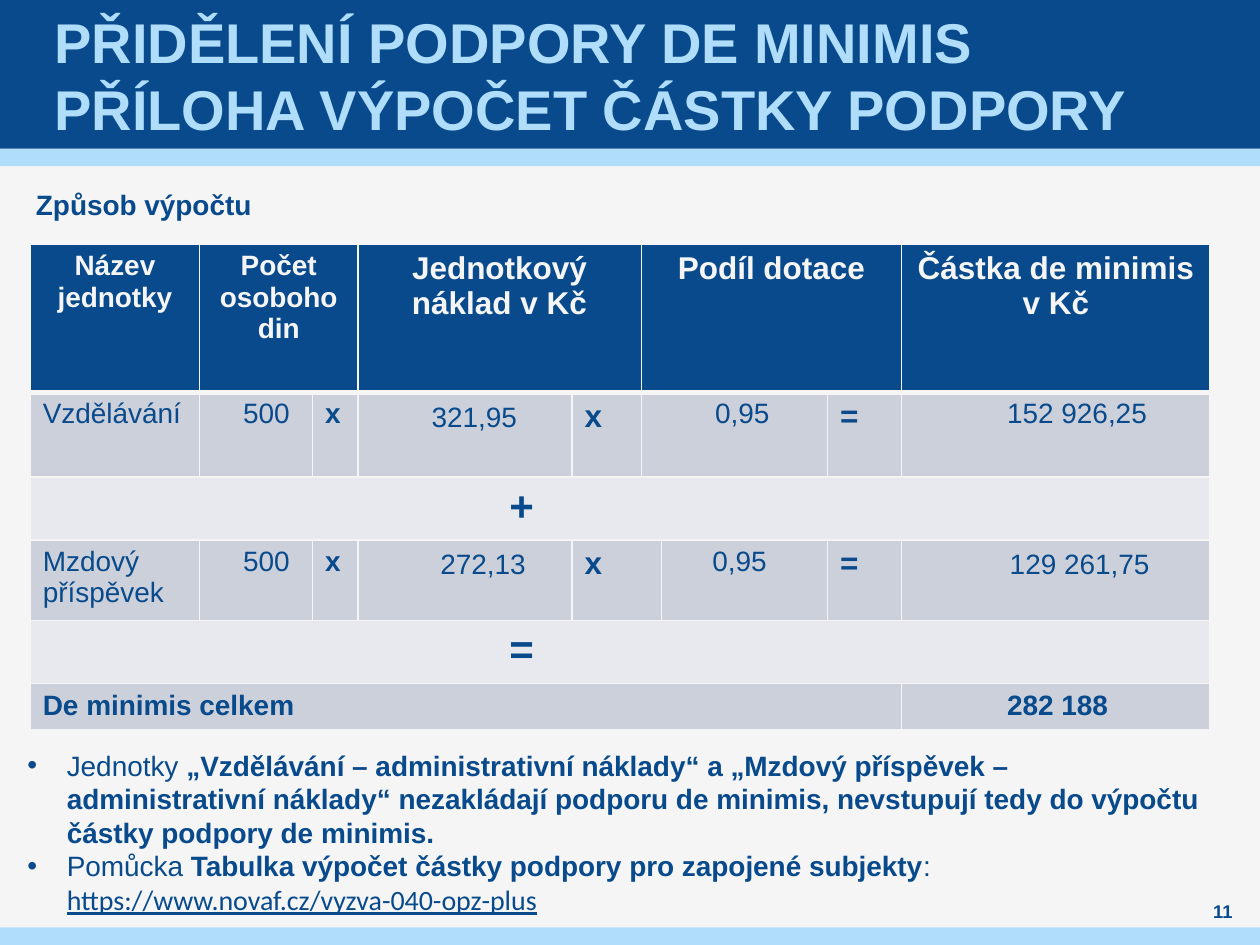
from itertools import product

from lxml.etree import SubElement
from pptx import Presentation
from pptx.dml.color import RGBColor
from pptx.enum.shapes import MSO_SHAPE
from pptx.enum.text import MSO_ANCHOR as Anchor, PP_ALIGN as Align
from pptx.oxml.ns import qn
from pptx.util import Pt

NAVY = RGBColor(0x08, 0x4A, 0x8B)
SKY = RGBColor(0xAF, 0xDD, 0xFA)
PAPER = RGBColor(0xF5, 0xF5, 0xF5)
ROW_DARK = RGBColor(0xCC, 0xD0, 0xDA)
ROW_LIGHT = RGBColor(0xE7, 0xE9, 0xEE)

COLUMN_WIDTHS = [96.8, 64.6, 25.8, 122.4, 39.6, 11.5, 95, 42.4, 176.2]
ROW_HEIGHTS = [84.6, 48.2, 36, 46.1, 36, 26.6]
ROW_FILLS = [NAVY, ROW_DARK, ROW_LIGHT, ROW_DARK, ROW_LIGHT, ROW_DARK]

# Each cell: text, columns spanned, size, bold, paragraph indent, top margin
TOP, LOWERED = 3.6, 5.4
TABLE_ROWS = [
    [("Název jednotky", 1, 16, True, 0, TOP),
     ("Počet osobohodin", 2, 16, True, 0, TOP),
     ("Jednotkový náklad v Kč", 2, 18, True, 0, TOP),
     ("Podíl dotace", 3, 18, True, 0, TOP),
     ("Částka de minimis v Kč", 1, 18, True, 0, TOP)],
    [("Vzdělávání", 1, 16, False, 0, TOP),
     ("500", 1, 16, False, 17.7, TOP),
     ("x", 1, 16, True, 0, TOP),
     ("321,95", 1, 16, False, 35, LOWERED),
     ("x", 1, 18, True, 0, TOP),
     ("0,95", 2, 16, False, 35, TOP),
     ("=", 1, 18, True, 0, TOP),
     ("152 926,25", 1, 16, False, 53, TOP)],
    [("+", 9, 24, True, 266.5, TOP)],
    [("Mzdový příspěvek", 1, 16, False, 0, TOP),
     ("500", 1, 16, False, 17.7, TOP),
     ("x", 1, 16, True, 0, TOP),
     ("272,13", 1, 16, False, 40, LOWERED),
     ("x", 2, 18, True, 0, TOP),
     ("0,95", 1, 16, False, 22, TOP),
     ("=", 1, 18, True, 0, TOP),
     ("129 261,75", 1, 16, False, 54.5, LOWERED)],
    [("=", 9, 24, True, 266.5, TOP)],
    [("De minimis celkem", 8, 16, True, 0, TOP),
     ("282 188", 1, 16, True, 53, TOP)],
]

NOTES = [
    [("Jednotky ", {}),
     ("„Vzdělávání – administrativní náklady“ a „Mzdový příspěvek – "
      "administrativní náklady“ nezakládají podporu de minimis, nevstupují "
      "tedy do výpočtu částky podpory de minimis.", {"bold": True})],
    [("Pomůcka ", {}),
     ("Tabulka výpočet částky podpory pro zapojené subjekty", {"bold": True}),
     (":", {}),
     ("\v", {}),
     ("https://www.novaf.cz/vyzva-040-opz-plus",
      {"name": "Calibri", "underline": True})],
]


def set_attributes(target, values):
    for name, value in values.items():
        setattr(target, name, value)


def format_font(font, size, color=NAVY, **values):
    font.color.rgb = color
    set_attributes(font, {"name": "Arial", "size": Pt(size), "bold": False, **values})


def set_margins(target, left, top, right, bottom):
    set_attributes(target, {"margin_left": Pt(left), "margin_top": Pt(top),
                            "margin_right": Pt(right), "margin_bottom": Pt(bottom)})


def set_indent(paragraph, left, first_line=0):
    properties = paragraph._p.get_or_add_pPr()
    properties.set("marL", str(Pt(left)))
    properties.set("indent", str(Pt(first_line)))
    return properties


def place(shape, box):
    set_attributes(shape, dict(zip(("left", "top", "width", "height"), map(Pt, box))))


def add_text_frame(slide, box, margins=(7.2, 3.6, 7.2, 3.6)):
    frame = slide.shapes.add_textbox(*map(Pt, box)).text_frame
    frame.word_wrap = True
    set_margins(frame, *margins)
    return frame


def add_band(slide, box, color):
    band = slide.shapes.add_shape(MSO_SHAPE.RECTANGLE, *map(Pt, box))
    band.shadow.inherit = False
    band.fill.solid()
    band.fill.fore_color.rgb = color
    band.line.fill.background()


def add_header(slide, box):
    left, top, width, height = box
    add_band(slide, (left, top + height, width, 10), SKY)
    add_band(slide, box, NAVY)
    title = slide.shapes.title
    slide.shapes._spTree.append(title._element)  # bring above the bands
    place(title, (left + 28, top, 663, height))
    frame = title.text_frame
    set_attributes(frame, {"word_wrap": True, "vertical_anchor": Anchor.MIDDLE})
    set_margins(frame, 3, 0, 3, 0)
    frame.text = "PŘIDĚLENÍ PODPORY DE MINIMIS\vPŘÍLOHA VÝPOČET ČÁSTKY PODPORY"
    paragraph = frame.paragraphs[0]
    paragraph.alignment = Align.LEFT
    for run in paragraph.runs:
        format_font(run.font, 32, SKY, bold=True)


def add_subheading(slide, box):
    frame = add_text_frame(slide, box, (12, 5.4, 7.2, 3.6))
    run = frame.paragraphs[0].add_run()
    run.text = "Způsob výpočtu"
    format_font(run.font, 16, bold=True)


def style_cell(cell, fill, thick_edge):
    # Borders come before the fill in the cell properties
    properties = cell._tc.get_or_add_tcPr()
    for edge in ("lnL", "lnR", "lnT", "lnB"):
        width = Pt(3 if edge == thick_edge else 1)
        line = SubElement(properties, qn(f"a:{edge}"), w=str(width))
        solid = SubElement(line, qn("a:solidFill"))
        SubElement(solid, qn("a:srgbClr"), val=str(PAPER))
    cell.fill.solid()
    cell.fill.fore_color.rgb = fill


def add_calculation_table(slide, left, top):
    rows, columns = len(ROW_HEIGHTS), len(COLUMN_WIDTHS)
    table = slide.shapes.add_table(
        rows, columns, Pt(left), Pt(top),
        Pt(sum(COLUMN_WIDTHS)), Pt(sum(ROW_HEIGHTS))).table
    for column, width in zip(table.columns, COLUMN_WIDTHS):
        column.width = Pt(width)
    for row, height in zip(table.rows, ROW_HEIGHTS):
        row.height = Pt(height)
    for row, column in product(range(rows), range(columns)):
        style_cell(table.cell(row, column), ROW_FILLS[row],
                   {0: "lnB", 1: "lnT"}.get(row))

    for row, entries in enumerate(TABLE_ROWS):
        column = 0
        for text, span, size, bold, indent, margin_top in entries:
            cell = table.cell(row, column)
            if span > 1:
                cell.merge(table.cell(row, column + span - 1))
            # Indents, unlike wide cell margins, never stretch a column
            set_margins(cell, 7.2, margin_top, 7.2, 3.6)
            paragraph = cell.text_frame.paragraphs[0]
            paragraph.alignment = Align.LEFT if row else Align.CENTER
            set_indent(paragraph, indent)
            run = paragraph.add_run()
            run.text = text
            format_font(run.font, size, NAVY if row else PAPER, bold=bold)
            column += span


def add_notes_list(slide, box):
    frame = add_text_frame(slide, box)
    for index, parts in enumerate(NOTES):
        paragraph = frame.add_paragraph() if index else frame.paragraphs[0]
        properties = set_indent(paragraph, 22.5, -22.5)
        SubElement(properties, qn("a:buFont"), typeface="Arial")
        SubElement(properties, qn("a:buChar"), char="•")
        for text, values in parts:
            if text == "\v":
                paragraph.add_line_break()
                continue
            run = paragraph.add_run()
            run.text = text
            format_font(run.font, 16, **values)


def add_footer(slide, band_box, number_box):
    add_band(slide, band_box, SKY)
    frame = add_text_frame(slide, number_box, (0, 0, 0, 0))
    frame.vertical_anchor = Anchor.MIDDLE
    paragraph = frame.paragraphs[0]
    paragraph.alignment = Align.CENTER
    run = paragraph.add_run()
    run.text = "11"
    format_font(run.font, 10.5, bold=True)


def main():
    presentation = Presentation()
    set_attributes(presentation, {"slide_width": Pt(720), "slide_height": Pt(540)})
    slide = presentation.slides.add_slide(presentation.slide_layouts[5])
    slide.background.fill.solid()
    slide.background.fill.fore_color.rgb = PAPER
    add_header(slide, (0, 0, 720, 85))
    add_footer(slide, (0, 530, 720, 10), (680.4, 513.4, 36.7, 14.4))
    add_subheading(slide, (8.6, 101.5, 360, 28.8))
    add_calculation_table(slide, 17.3, 139.7)
    add_notes_list(slide, (8.6, 424, 692, 126))
    presentation.save("out.pptx")


if __name__ == "__main__":
    main()
